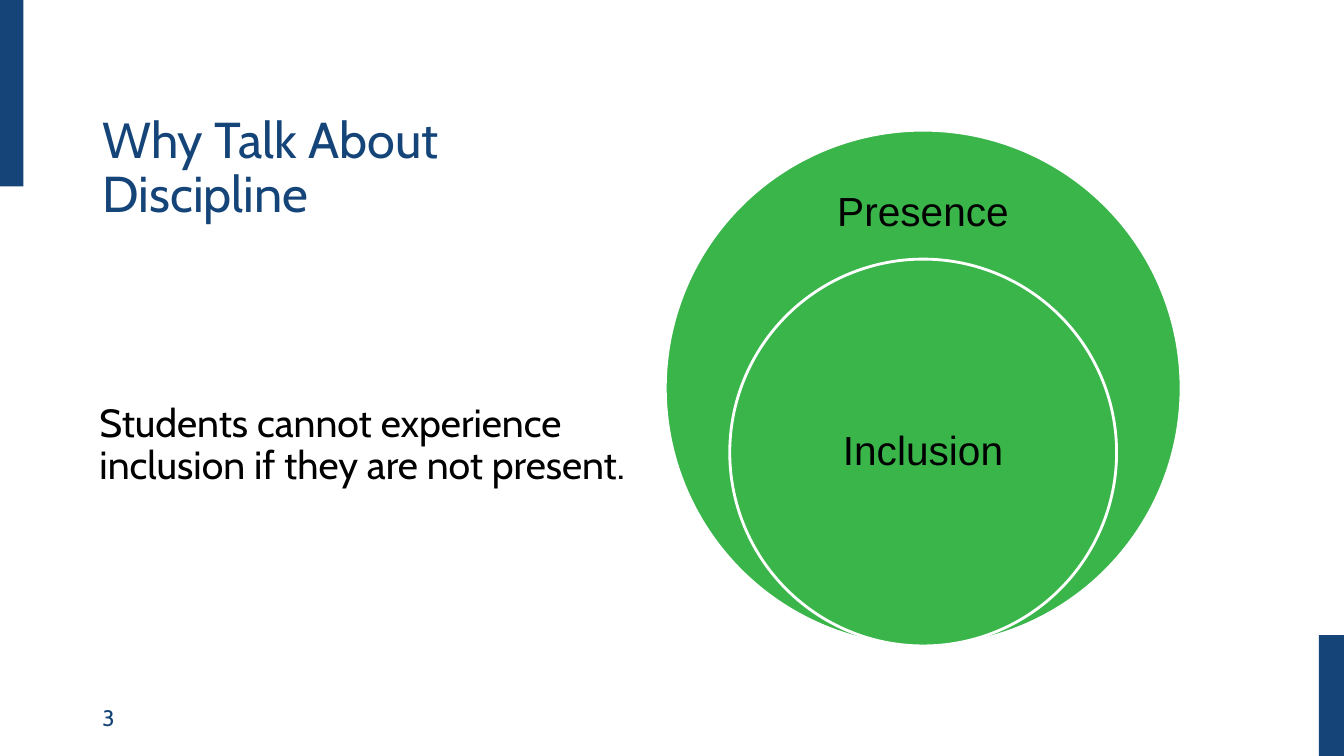
"""Build a slide on why presence comes before inclusion."""
from pptx import Presentation
from pptx.dml.color import RGBColor
from pptx.enum.shapes import MSO_SHAPE
from pptx.enum.text import MSO_ANCHOR, PP_ALIGN
from pptx.util import Inches, Pt

WIDE, HIGH = Inches(13.33), Inches(7.5)
COLS, ROWS = 16, 9
NAVY, GREEN, WHITE, BLACK = "154578", "39B54A", "FFFFFF", "000000"
MID, BASE = 10.99, 7.69


def paint(code):
    return RGBColor.from_string(code)


def place(left, top, width, height):
    col, row = WIDE / COLS, HIGH / ROWS
    return [round(n) for n in (left * col, top * row, width * col, height * row)]


def shape(slide, kind, box, fill, line=None):
    item = slide.shapes.add_shape(kind, *place(*box))
    item.shadow.inherit = False
    item.fill.solid()
    item.fill.fore_color.rgb = paint(fill)
    if line:
        item.line.color.rgb = paint(line)
        item.line.width = Pt(2)
    else:
        item.line.fill.background()


def text(slide, words, box, size, color=BLACK, font="Cabin", align=PP_ALIGN.LEFT,
         anchor=MSO_ANCHOR.MIDDLE, inset=0.1, space=0.9):
    frame = slide.shapes.add_textbox(*place(*box)).text_frame
    frame.word_wrap = True
    frame.vertical_anchor = anchor
    frame.margin_left = Inches(inset)
    para = frame.paragraphs[0]
    para.alignment = align
    para.line_spacing = space
    run = para.add_run()
    run.text = words
    run.font.size = Pt(size)
    run.font.name = font
    run.font.color.rgb = paint(color)


def ring(slide, size):
    box = (MID - size / 2, BASE - size, size, size)
    shape(slide, MSO_SHAPE.OVAL, box, GREEN, WHITE)


def label(slide, words, middle):
    width, height = 3.24, 1.04
    box = (MID - width / 2, middle - height / 2, width, height)
    text(slide, words, box, 29, font="Arial", align=PP_ALIGN.CENTER)


def main():
    deck = Presentation()
    deck.slide_width, deck.slide_height = WIDE, HIGH
    slide = deck.slides.add_slide(deck.slide_layouts[6])

    for box in ((0, 0, 0.28, 2.22), (15.7, 7.56, 0.3, 1.44)):
        shape(slide, MSO_SHAPE.RECTANGLE, box, NAVY)

    text(slide, "3", (1.1, 8.3, 3.6, 0.48), 16, NAVY, space=1.0)
    text(slide, "Why Talk About Discipline", (1.1, 0.6, 6.64, 2.12), 36, NAVY,
         anchor=MSO_ANCHOR.BOTTOM)
    text(slide, "Students cannot experience inclusion if they are not present.",
         (0.92, 4.74, 6.64, 2), 28, anchor=MSO_ANCHOR.TOP, inset=0.22)

    outer = 6.14
    inner = outer * 0.75
    ring(slide, outer)
    label(slide, "Presence", 2.54)
    ring(slide, inner)
    label(slide, "Inclusion", BASE - inner / 2)

    deck.save("out.pptx")


if __name__ == "__main__":
    main()
